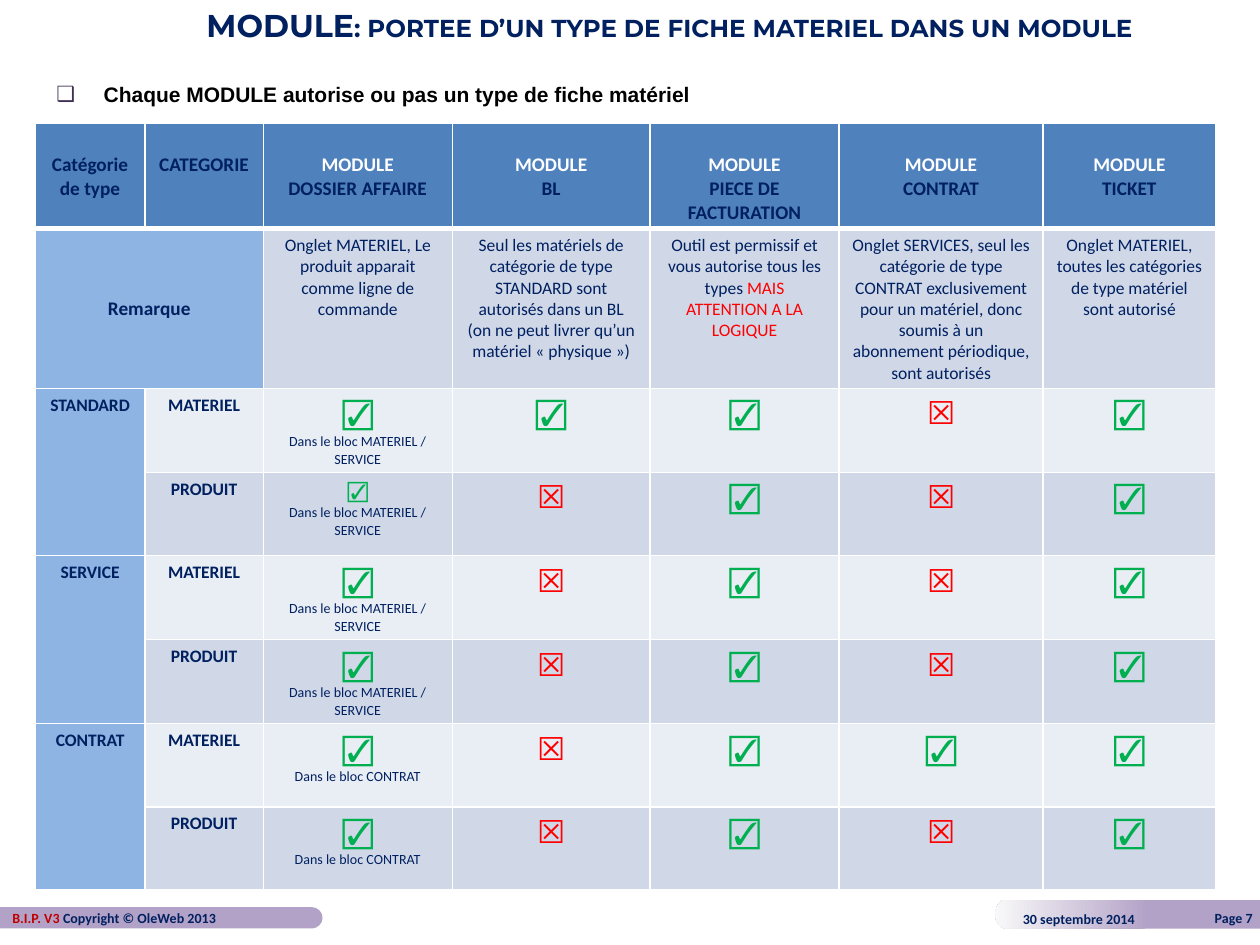
import math

from lxml import etree
from pptx import Presentation
from pptx.dml.color import RGBColor
from pptx.enum import text
from pptx.oxml import ns
from pptx.util import Pt

NAVY, WHITE, RED, GREEN = "002060", "FFFFFF", "FF0000", "00B050"
MAUVE, BLUE, LIGHT_BLUE = "B3A2C7", "4F81BD", "8EB4E3"
BANDS = ["E9EDF4", "D0D8E8"]
LEFT, CENTER, RIGHT = text.PP_ALIGN.LEFT, text.PP_ALIGN.CENTER, text.PP_ALIGN.RIGHT
TOP, MIDDLE = text.MSO_ANCHOR.TOP, text.MSO_ANCHOR.MIDDLE

COLUMNS = [62.64, 67.68, 108, 113.04, 108, 116.64, 98.64]
MODULES = ["DOSSIER AFFAIRE", "BL", "PIECE DE FACTURATION", "CONTRAT", "TICKET"]
REMARKS = [
    "Onglet MATERIEL, Le produit apparait comme ligne de commande",
    "Seul les matériels de catégorie de type STANDARD sont autorisés dans un BL "
    "(on ne peut livrer qu’un matériel « physique »)",
    "Outil est permissif et vous autorise tous les types ",
    "Onglet SERVICES, seul les catégorie de type CONTRAT exclusivement pour un matériel, "
    "donc soumis à un abonnement périodique, sont autorisés",
    "Onglet MATERIEL, toutes les catégories de type matériel sont autorisé",
]
WARNING = "MAIS ATTENTION A LA LOGIQUE"
BLOC_MATERIEL, BLOC_CONTRAT = "Dans le bloc MATERIEL / SERVICE", "Dans le bloc CONTRAT"
# type, marks of its MATERIEL and PRODUIT rows, note under the first mark
TYPES = [
    ("STANDARD", ["☑☑☑☒☑", "☑☒☑☒☑"], BLOC_MATERIEL),
    ("SERVICE", ["☑☒☑☒☑", "☑☒☑☒☑"], BLOC_MATERIEL),
    ("CONTRAT", ["☑☒☑☑☑", "☑☒☑☒☑"], BLOC_CONTRAT),
]


def rgb(hex_color):
    return RGBColor.from_string(hex_color)


def add_run(p, content, size=10, color=NAVY, bold=False, font="Calibri"):
    r = p.add_run()
    r.text = content
    r.font.size, r.font.bold, r.font.name = Pt(size), bold, font
    r.font.color.rgb = rgb(color)


def add_line(tf, content, align=CENTER, **fmt):
    """Add a paragraph, using the empty first one when it is free."""
    p = tf.paragraphs[-1]
    if p.runs:
        p = tf.add_paragraph()
    p.alignment = align
    add_run(p, content, **fmt)
    return p


def add_text(s, box, content, align=LEFT, anchor=TOP, **fmt):
    tf = s.shapes.add_textbox(*map(Pt, box)).text_frame
    tf.word_wrap = True
    tf.vertical_anchor = anchor
    return add_line(tf, content, align, **fmt)


def add_bullet(p, char, color, indent):
    pPr = p._p.get_or_add_pPr()
    pPr.set("marL", str(Pt(indent)))
    pPr.set("indent", str(-Pt(indent)))
    clr = etree.SubElement(pPr, ns.qn("a:buClr"))
    etree.SubElement(clr, ns.qn("a:srgbClr"), val=color)
    etree.SubElement(pPr, ns.qn("a:buFont"), typeface="Arial")
    etree.SubElement(pPr, ns.qn("a:buChar"), char=char)


def add_tab(s, flat_x, round_x, top, height):
    """Add a band with a flat end and a round end."""
    side = 1 if round_x > flat_x else -1
    rx, ry = 6.5, height / 2
    arc = [math.radians(a) for a in range(-90, 91, 10)]
    points = [(round_x - side * rx * (1 - math.cos(a)), top + ry + ry * math.sin(a)) for a in arc]
    points.append((flat_x, top + height))
    fb = s.shapes.build_freeform(Pt(flat_x), Pt(top))
    fb.add_line_segments([(Pt(x), Pt(y)) for x, y in points])
    sp = fb.convert_to_shape()
    sp.shadow.inherit = False
    sp.line.fill.background()
    return sp


def fill_solid(sp, color):
    sp.fill.solid()
    sp.fill.fore_color.rgb = rgb(color)


def fill_fade(sp, stops, angle):
    sp.fill.gradient()
    sp.fill.gradient_angle = angle
    for stop, (position, color) in zip(sp.fill.gradient_stops, stops):
        stop.position = position
        stop.color.rgb = rgb(color)


def style_cell(cell, color, bottom=1):
    """Set the white borders, then the fill, in the order the schema asks."""
    tcPr = cell._tc.get_or_add_tcPr()
    for edge, width in (("L", 1), ("R", 1), ("T", 1), ("B", bottom)):
        ln = etree.SubElement(tcPr, ns.qn(f"a:ln{edge}"), w=str(Pt(width)))
        solid = etree.SubElement(ln, ns.qn("a:solidFill"))
        etree.SubElement(solid, ns.qn("a:srgbClr"), val=WHITE)
    fill_solid(cell, color)


def fill_header(table):
    for c in range(len(COLUMNS)):
        cell = table.cell(0, c)
        style_cell(cell, BLUE, bottom=3)
        cell.margin_top = Pt(17)
        if c < 2:
            add_line(cell.text_frame, ["Catégorie de type", "CATEGORIE"][c], size=11, bold=True)
        else:
            add_line(cell.text_frame, "MODULE", size=11, color=WHITE, bold=True)
            add_line(cell.text_frame, MODULES[c - 2], size=11, bold=True)


def fill_remarks(table):
    title = table.cell(1, 0)
    title.merge(table.cell(1, 1))
    for c in range(2):
        style_cell(table.cell(1, c), LIGHT_BLUE)
    title.vertical_anchor = MIDDLE
    add_line(title.text_frame, "Remarque", size=11, bold=True)
    for c, remark in enumerate(REMARKS, 2):
        cell = table.cell(1, c)
        style_cell(cell, BANDS[1])
        p = add_line(cell.text_frame, remark)
        if MODULES[c - 2] == "PIECE DE FACTURATION":
            add_run(p, WARNING, color=RED)


def fill_type(table, top, name, mark_rows, note):
    table.cell(top, 0).merge(table.cell(top + 1, 0))
    add_line(table.cell(top, 0).text_frame, name, bold=True)
    for i, marks in enumerate(mark_rows):
        row = top + i
        style_cell(table.cell(row, 0), LIGHT_BLUE)
        for c in range(1, len(COLUMNS)):
            style_cell(table.cell(row, c), BANDS[i])
        add_line(table.cell(row, 1).text_frame, ["MATERIEL", "PRODUIT"][i], bold=True)
        for c, mark in enumerate(marks, 2):
            small = (name, i, c) == ("STANDARD", 1, 2)
            add_line(table.cell(row, c).text_frame, mark, size=12 if small else 18,
                     color=GREEN if mark == "☑" else RED)
        add_line(table.cell(row, 2).text_frame, note, size=8)


def add_scope_table(s):
    rows = 2 + 2 * len(TYPES)
    frame = s.shapes.add_table(rows, len(COLUMNS), Pt(20.16), Pt(70.5), Pt(sum(COLUMNS)), Pt(437.8))
    table = frame.table
    table.first_row = table.horz_banding = False
    for column, width in zip(table.columns, COLUMNS):
        column.width = Pt(width)
    for i, row in enumerate(table.rows):
        row.height = Pt(47.5 if i else 51)
    fill_header(table)
    fill_remarks(table)
    for i, (name, mark_rows, note) in enumerate(TYPES):
        fill_type(table, 2 + 2 * i, name, mark_rows, note)


def add_footer(s):
    fill_solid(add_tab(s, 0, 184.3, 518.4, 12.2), MAUVE)
    p = add_text(s, (0, 516.2, 184.3, 17.3), "B.I.P. V3 ", size=8, color="C00000", bold=True)
    add_run(p, "Copyright © OleWeb 2013", size=8, bold=True)
    fill_fade(add_tab(s, 720, 568.8, 514.1, 16.6), [(0.42, MAUVE), (1, "F8F8F8")], 180)
    add_text(s, (666.7, 514.1, 56.2, 20.9), "Page 7", RIGHT, MIDDLE, size=8, bold=True)
    add_text(s, (577.4, 514.1, 92.9, 21.6), "30 septembre 2014", anchor=MIDDLE, size=8, bold=True)


def main():
    prs = Presentation()
    prs.slide_width, prs.slide_height = Pt(720), Pt(540)
    s = prs.slides.add_slide(prs.slide_layouts[6])
    add_footer(s)
    p = add_text(s, (110.9, 0, 601.2, 28.1), "MODULE", size=18, bold=True, font="Montserrat")
    add_run(p, ": PORTEE D’UN TYPE DE FICHE MATERIEL DANS UN MODULE",
            size=14, bold=True, font="Montserrat")
    p = add_text(s, (25.2, 43.2, 669.6, 436.3),
                 "Chaque MODULE autorise ou pas un type de fiche matériel",
                 size=12, color="000000", bold=True, font="Arial")
    add_bullet(p, "❑", "403152", 27)
    add_scope_table(s)
    prs.save("out.pptx")


if __name__ == "__main__":
    main()
